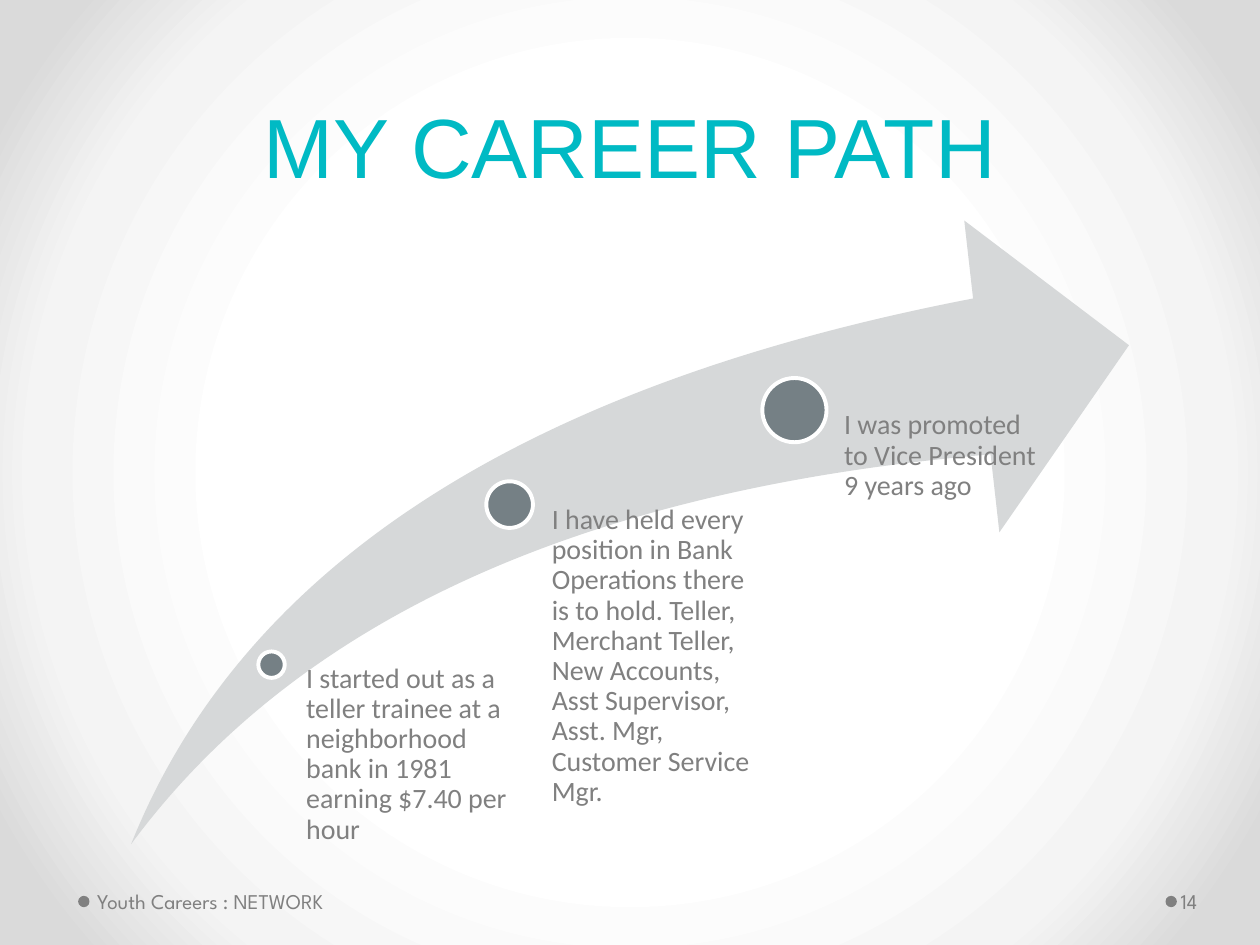
from pptx import Presentation
from pptx.dml.color import RGBColor
from pptx.enum.shapes import MSO_SHAPE
from pptx.enum.text import MSO_ANCHOR, PP_ALIGN
from pptx.oxml import parse_xml
from pptx.oxml.ns import nsdecls
from pptx.util import Inches, Pt

TEAL = RGBColor(0x00, 0xBA, 0xC4)
GRAY = RGBColor(0x80, 0x80, 0x80)
SLATE = RGBColor(0x75, 0x80, 0x85)
PALE = RGBColor(0xD6, 0xD8, 0xD9)
WHITE = RGBColor(0xFF, 0xFF, 0xFF)
GLOW = [(50, WHITE), (76, RGBColor(0xF4, 0xF4, 0xF4)), (92, RGBColor(0xDA, 0xDA, 0xDA))]

TITLE = {"name": "Arial", "size": Pt(48), "color": TEAL}
BODY = {"name": "Calibri", "size": Pt(16), "color": GRAY}
FOOT = {"name": "League Spartan", "size": Pt(12), "color": GRAY}

# Dot left, top, size; then text left, top, width, left inset
STEPS = [
    ((2.05, 5.17, 0.21), (2.32, 5.27, 1.85, 0.11),
     "I started out as a teller trainee at a neighborhood bank in 1981 earning $7.40 per hour"),
    ((3.86, 3.82, 0.37), (4.18, 4.01, 1.9, 0.2),
     "I have held every position in Bank Operations there is to hold. Teller, Merchant Teller, "
     "New Accounts, Asst Supervisor, Asst. Mgr, Customer Service Mgr."),
    ((6.05, 3, 0.51), (6.43, 3.26, 1.9, 0.27),
     "I was promoted to Vice President 9 years ago"),
]
BASE = 6.7  # common lower edge of the arrow and the step texts


def add_glow(slide):
    """Fill the background with a round gradient."""
    slide.background.fill.solid()
    props = slide.element.xpath(".//p:bgPr")[0]
    stops = "".join(
        f'<a:gs pos="{pos * 1000}"><a:srgbClr val="{color}"/></a:gs>' for pos, color in GLOW)
    props.replace(props[0], parse_xml(
        f'<a:gradFill {nsdecls("a")} rotWithShape="1"><a:gsLst>{stops}</a:gsLst>'
        '<a:path path="circle"><a:fillToRect l="50000" t="50000" r="50000" b="50000"/></a:path>'
        '</a:gradFill>'))


def add_form(slide, kind, box, color, edge=None):
    """Add a flat preset shape, with a white edge of the given width if any."""
    form = slide.shapes.add_shape(kind, *map(Inches, box))
    form.shadow.inherit = False
    form.fill.solid()
    form.fill.fore_color.rgb = color
    if edge:
        form.line.color.rgb = WHITE
        form.line.width = edge
    else:
        form.line.fill.background()
    return form


def add_text(slide, box, text, style, inset, anchor=MSO_ANCHOR.TOP, **layout):
    """Add one wrapped paragraph; layout holds paragraph settings."""
    frame = slide.shapes.add_textbox(*map(Inches, box)).text_frame
    frame.word_wrap = True
    frame.vertical_anchor = anchor
    for side, gap in zip(("left", "top", "right", "bottom"), inset):
        setattr(frame, f"margin_{side}", Inches(gap))
    para = frame.paragraphs[0]
    for key, value in layout.items():
        setattr(para, key, value)
    run = para.add_run()
    run.text = text
    for key, value in style.items():
        if key == "color":
            run.font.color.rgb = value
        else:
            setattr(run.font, key, value)


def add_step(slide, dot, place, text):
    """Add a career step: a dot on the arrow and its text."""
    left, top, size = dot
    add_form(slide, MSO_SHAPE.OVAL, (left, top, size, size), SLATE, Pt(2.25))
    left, top, width, inset = place
    add_text(slide, (left, top, width, BASE - top), text, BODY, (inset, 0, 0, 0),
             line_spacing=0.9)


def add_foot(slide, dot, left, width, text, inset):
    """Add a footer entry with its bullet dot."""
    add_form(slide, MSO_SHAPE.OVAL, (dot, 7.11, 0.09, 0.09), GRAY)
    add_text(slide, (left, 6.95, width, 0.4), text, FOOT, inset, MSO_ANCHOR.MIDDLE)


def main():
    deck = Presentation()
    deck.slide_width, deck.slide_height = Inches(10), Inches(7.5)
    slide = deck.slides.add_slide(deck.slide_layouts[6])
    add_glow(slide)

    # Title
    add_text(slide, (0.5, 0.15, 9, 1.45), "MY CAREER PATH", TITLE, (0.1, 0.05, 0.1, 0.05),
             MSO_ANCHOR.BOTTOM, alignment=PP_ALIGN.CENTER, line_spacing=Pt(58))

    # Rising arrow with the career steps
    arrow = add_form(slide, MSO_SHAPE.SWOOSH_ARROW, (1.04, 1.75, 7.92, BASE - 1.75), PALE)
    arrow.adjustments[0] = arrow.adjustments[1] = 0.25
    for step in STEPS:
        add_step(slide, *step)

    # Footer and slide number
    add_foot(slide, 0.62, 0.72, 3.11, "Youth Careers : NETWORK", (0.05, 0.05, 0.1, 0.05))
    add_foot(slide, 9.25, 9.34, 0.61, "14", (0.03, 0.05, 0.05, 0.05))

    deck.save("out.pptx")


if __name__ == "__main__":
    main()
